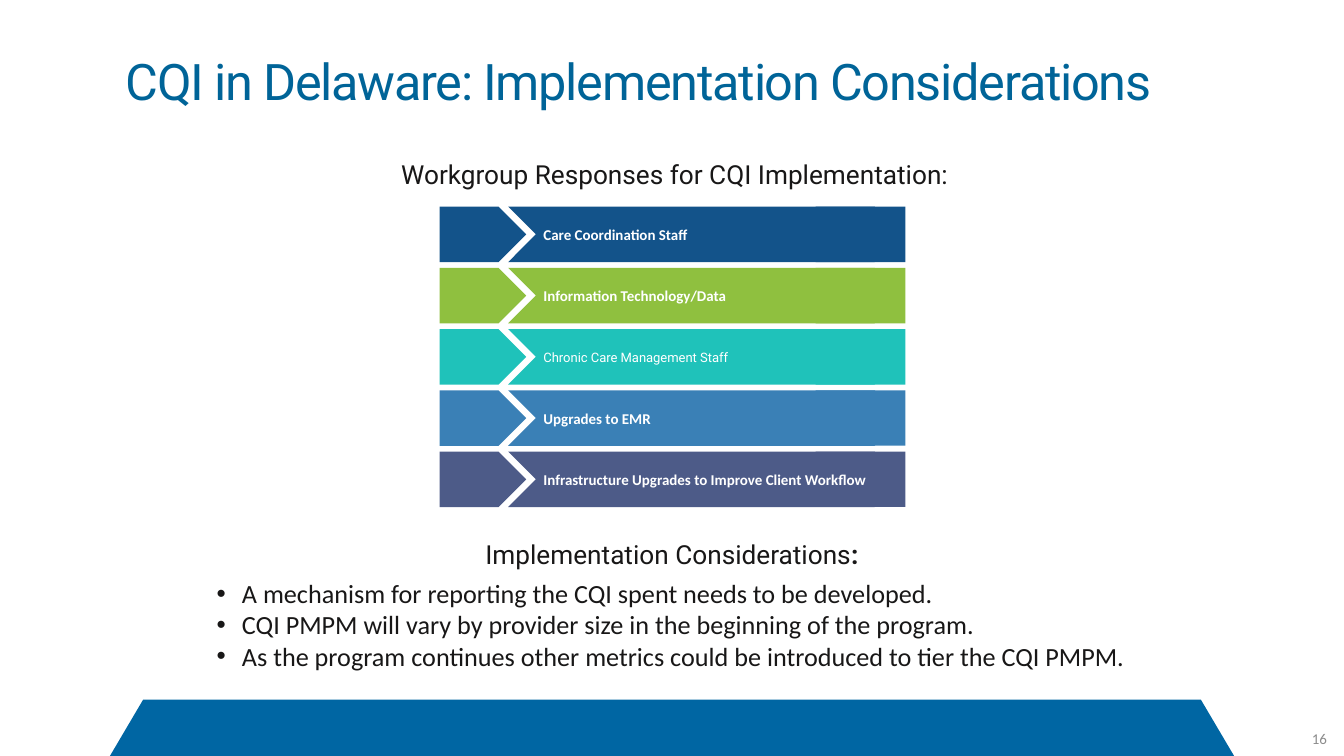
from lxml.etree import SubElement
from pptx import Presentation
from pptx.dml.color import RGBColor
from pptx.enum.shapes import MSO_SHAPE
from pptx.enum.text import MSO_ANCHOR, PP_ALIGN
from pptx.oxml.ns import qn
from pptx.util import Inches, Pt

TITLE_BLUE = RGBColor(0x00, 0x64, 0x98)
FOOTER_BLUE = RGBColor(0x00, 0x66, 0xA3)
INK = RGBColor(0x18, 0x17, 0x17)
GRAY = RGBColor(0x8C, 0x8C, 0x8C)
WHITE = RGBColor(0xFF, 0xFF, 0xFF)
NAVY = RGBColor(0x13, 0x53, 0x8A)
GREEN = RGBColor(0x8F, 0xC0, 0x3F)
TEAL = RGBColor(0x1F, 0xC2, 0xBA)
SKY = RGBColor(0x3A, 0x80, 0xB6)
INDIGO = RGBColor(0x4D, 0x5B, 0x88)

TITLE = {"name": "Roboto", "size": Pt(36), "color": TITLE_BLUE}
HEADING = {"name": "Roboto", "size": Pt(18.7), "color": INK}
BODY = {**HEADING, "name": "Calibri"}
PAGE = {"name": "Calibri", "size": Pt(10.7), "color": GRAY}
LABEL = {**PAGE, "color": WHITE, "bold": True}
LIGHT_LABEL = {"name": "Roboto", "size": Pt(9.3), "color": WHITE}

RESPONSES = [
    ("Care Coordination Staff", NAVY, LABEL),
    ("Information Technology/Data", GREEN, LABEL),
    ("Chronic Care Management Staff", TEAL, LIGHT_LABEL),
    ("Upgrades to EMR", SKY, LABEL),
    ("Infrastructure Upgrades to Improve Client Workflow", INDIGO, LABEL),
]
CONSIDERATIONS = [
    "A mechanism for reporting the CQI spent needs to be developed.",
    "CQI PMPM will vary by provider size in the beginning of the program.",
    "As the program continues other metrics could be introduced to tier the CQI PMPM.",
]


def add_run(paragraph, text, style):
    run = paragraph.add_run()
    run.text = text
    for attribute, value in style.items():
        if attribute == "color":
            run.font.color.rgb = value
        else:
            setattr(run.font, attribute, value)
    return run


def add_text_box(shapes, left, top, width, height, margin=0, anchor=MSO_ANCHOR.TOP):
    """Add an empty wrapping text box and return its text frame."""
    box = shapes.add_textbox(Inches(left), Inches(top), Inches(width), Inches(height))
    frame = box.text_frame
    frame.word_wrap = True
    frame.vertical_anchor = anchor
    for side in ("left", "top", "right", "bottom"):
        setattr(frame, f"margin_{side}", Inches(margin))
    return frame


def paint(shape, color):
    shape.shadow.inherit = False
    shape.fill.solid()
    shape.fill.fore_color.rgb = color
    shape.line.fill.background()


def add_footer(slide, left, top, width, height):
    """Draw the footer hexagon, whose lower half bleeds off the slide."""
    slant, right, bottom = 0.33, left + width, top + height
    middle = top + height / 2
    builder = slide.shapes.build_freeform(
        Inches(right - slant), Inches(top), scale=1.0)
    corners = [(left + slant, top), (left, middle), (left + slant, bottom),
               (right - slant, bottom), (right, middle)]
    builder.add_line_segments([(Inches(x), Inches(y)) for x, y in corners])
    paint(builder.convert_to_shape(), FOOTER_BLUE)


def add_title(slide, left, top, width, height):
    frame = add_text_box(slide.shapes, left, top, width, height)
    run = add_run(frame.paragraphs[0], "CQI in Delaware: Implementation Considerations", TITLE)
    run._r.get_or_add_rPr().set("spc", "-90")


def add_page_number(slide, left, top, width, height):
    frame = add_text_box(slide.shapes, left, top, width, height, 0.1, MSO_ANCHOR.MIDDLE)
    frame.paragraphs[0].alignment = PP_ALIGN.RIGHT
    add_run(frame.paragraphs[0], "16", PAGE)


def add_responses_heading(slide, left, top, width, height):
    frame = add_text_box(slide.shapes, left, top, width, height, 0.07, MSO_ANCHOR.MIDDLE)
    add_run(frame.paragraphs[0], "Workgroup Responses for CQI Implementation:", HEADING)


def add_response_bar(slide, left, top, width, height, label, color, style):
    """Draw one bar: arrow tab, chevron, squared-off right end and label."""
    shapes = slide.shapes.add_group_shape().shapes
    parts = [
        (MSO_SHAPE.PENTAGON, 0, 0.86),
        (MSO_SHAPE.CHEVRON, 0.68, width - 0.71),
        (MSO_SHAPE.RECTANGLE, width - 0.89, 0.89),
    ]
    for kind, offset, part_width in parts:
        part = shapes.add_shape(
            kind, Inches(left + offset), Inches(top), Inches(part_width), Inches(height))
        paint(part, color)
    frame = add_text_box(shapes, left + 0.96, top + 0.13, width - 0.97, height - 0.26,
                         0.07, MSO_ANCHOR.MIDDLE)
    add_run(frame.paragraphs[0], label, style)


def add_responses(slide, left, top, width, height):
    bar_height = 0.55
    pitch = (height - bar_height) / (len(RESPONSES) - 1)
    for index, response in enumerate(RESPONSES):
        add_response_bar(slide, left, top + index * pitch, width, bar_height, *response)


def add_bullet(paragraph):
    properties = paragraph._p.get_or_add_pPr()
    properties.set("marL", str(Inches(0.25)))
    properties.set("indent", str(-Inches(0.25)))
    SubElement(properties, qn("a:buFont")).set("typeface", "Arial")
    SubElement(properties, qn("a:buChar")).set("char", "•")


def add_considerations(slide, left, top, width, height):
    frame = add_text_box(slide.shapes, left, top, width, height)
    heading = frame.paragraphs[0]
    heading_format = {"alignment": PP_ALIGN.CENTER, "line_spacing": 1.07,
                      "space_after": Pt(5.3)}
    for attribute, value in heading_format.items():
        setattr(heading, attribute, value)
    add_run(heading, "Implementation Considerations", HEADING)
    add_run(heading, ":", {**HEADING, "bold": True})
    for text in CONSIDERATIONS:
        paragraph = frame.add_paragraph()
        add_bullet(paragraph)
        add_run(paragraph, text, BODY)


def main():
    presentation = Presentation()
    presentation.slide_width = Inches(13.33)
    presentation.slide_height = Inches(7.5)
    slide = presentation.slides.add_slide(presentation.slide_layouts[6])
    add_footer(slide, 1.09, 6.94, 11.15, 1.12)
    add_title(slide, 1.25, 0.5, 10.84, 0.61)
    add_page_number(slide, 11.76, 7.19, 1.5, 0.27)
    add_responses_heading(slide, 3.91, 1.57, 6.27, 0.31)
    add_responses(slide, 4.36, 2.05, 4.62, 2.98)
    add_considerations(slide, 2.15, 5.32, 9.03, 1.67)
    presentation.save("out.pptx")


if __name__ == "__main__":
    main()
